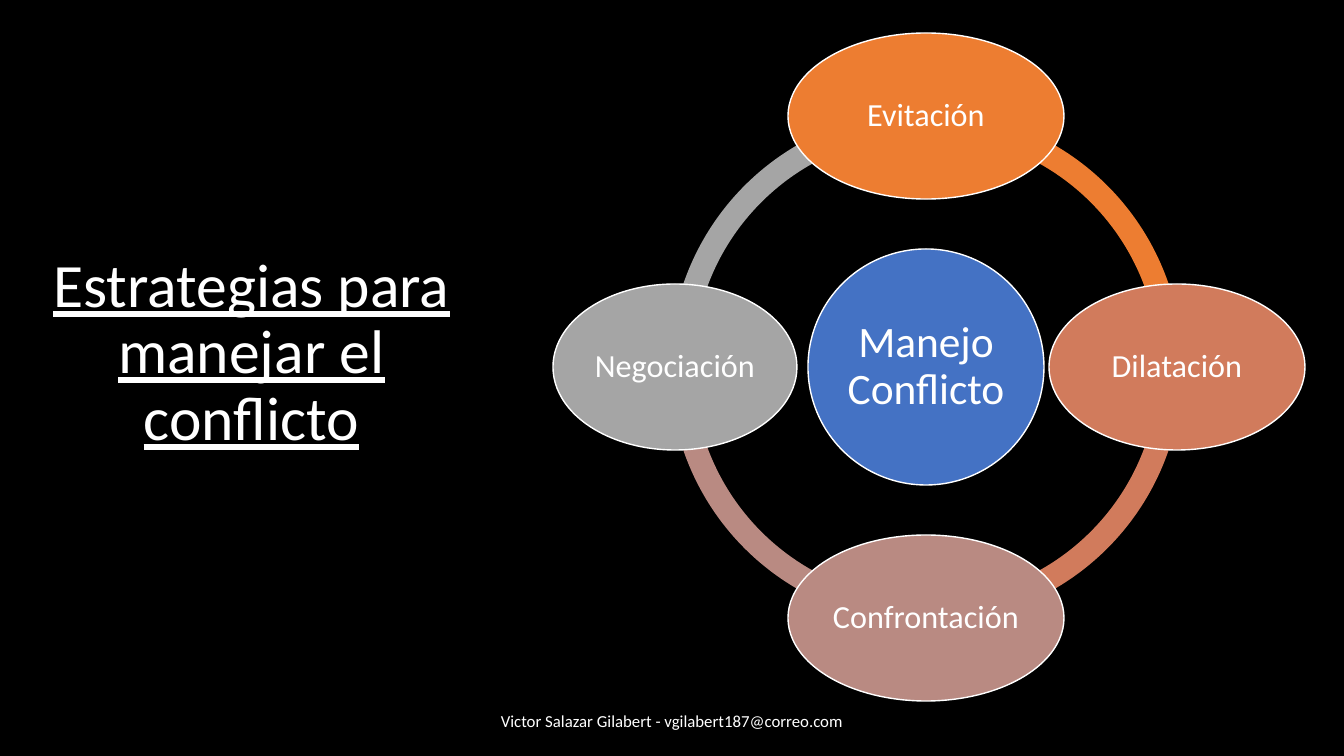
from pptx import Presentation
from pptx.dml.color import RGBColor
from pptx.enum.shapes import MSO_SHAPE
from pptx.enum.text import MSO_ANCHOR, MSO_AUTO_SIZE, PP_ALIGN
from pptx.util import Emu, Pt

OVAL, BLOCK_ARC = MSO_SHAPE.OVAL, MSO_SHAPE.BLOCK_ARC
MIDDLE, CENTER = MSO_ANCHOR.MIDDLE, PP_ALIGN.CENTER
NO_AUTOFIT = MSO_AUTO_SIZE.NONE
WHITE = "FFFFFF"


def px(length):
    return Emu(round(length * 914400 / 100.8))


def color(fill_format, hex_color):
    fill_format.solid()
    fill_format.fore_color.rgb = RGBColor.from_string(hex_color)


presentation = Presentation()
presentation.slide_width, presentation.slide_height = px(1344), px(756)
slide = presentation.slides.add_slide(presentation.slide_layouts[5])
color(slide.background.fill, "000000")

# Title and footer line
title = slide.shapes.title
title.left, title.top, title.width, title.height = px(10), px(129), px(483), px(450)
title.text_frame.text = "Estrategias para manejar el conflicto"
footer = slide.shapes.add_textbox(px(445), px(701), px(454), px(40))
footer.text_frame.text = "Victor Salazar Gilabert - vgilabert187@correo.com"
texts = [(title, 44, 0.9), (footer, 12, 1.0)]

# Cycle: name, colour, direction from the centre, width, quarter arc that follows
CENTER_X, CENTER_Y, RADIUS = 926, 367, 251
RING_SIZE, HUB_SIZE, NODE_HEIGHT = 513, 236, 166
QUARTER = 54  # 90 degrees in adjustment units
strategies = [
    ("Evitación", "ED7D31", 0, -1, 276, 3),
    ("Dilatación", "D17B5C", 1, 0, 256, 0),
    ("Confrontación", "B98A82", 0, 1, 276, 1),
    ("Negociación", "A5A5A5", -1, 0, 244, 2),
]

# Ring
for name, hex_color, dx, dy, width, quarter in reversed(strategies):
    arc = slide.shapes.add_shape(
        BLOCK_ARC, px(CENTER_X - RING_SIZE / 2), px(CENTER_Y - RING_SIZE / 2),
        px(RING_SIZE), px(RING_SIZE))
    arc.adjustments[0] = quarter * QUARTER
    arc.adjustments[1] = (quarter + 1) % 4 * QUARTER
    arc.adjustments[2] = 0.046
    arc.shadow.inherit = False
    color(arc.fill, hex_color)
    arc.line.fill.background()

# Hub and strategy ovals
ovals = [("Manejo Conflicto", "4472C4", 0, 0, HUB_SIZE, HUB_SIZE, 31, 4)]
for name, hex_color, dx, dy, width, quarter in strategies:
    ovals.append((name, hex_color, dx, dy, width, NODE_HEIGHT, 23, 3))

for name, hex_color, dx, dy, width, height, size, inset in ovals:
    oval = slide.shapes.add_shape(
        OVAL, px(CENTER_X + dx * RADIUS - width / 2),
        px(CENTER_Y + dy * RADIUS - height / 2), px(width), px(height))
    oval.shadow.inherit = False
    color(oval.fill, hex_color)
    color(oval.line.fill, WHITE)
    oval.line.width = Pt(1)
    frame = oval.text_frame
    frame.text = name
    frame.margin_left = frame.margin_right = px(inset)
    frame.margin_top = frame.margin_bottom = px(inset)
    texts.append((oval, size, 0.9))

# Text format
for shape, size, spacing in texts:
    frame = shape.text_frame
    frame.word_wrap = True
    frame.auto_size = NO_AUTOFIT
    frame.vertical_anchor = MIDDLE
    paragraph = frame.paragraphs[0]
    paragraph.alignment = CENTER
    paragraph.line_spacing = spacing
    font = paragraph.runs[0].font
    font.name, font.size = "Calibri", Pt(size)
    color(font.fill, WHITE)
title.text_frame.paragraphs[0].runs[0].font.underline = True

presentation.save("out.pptx")
